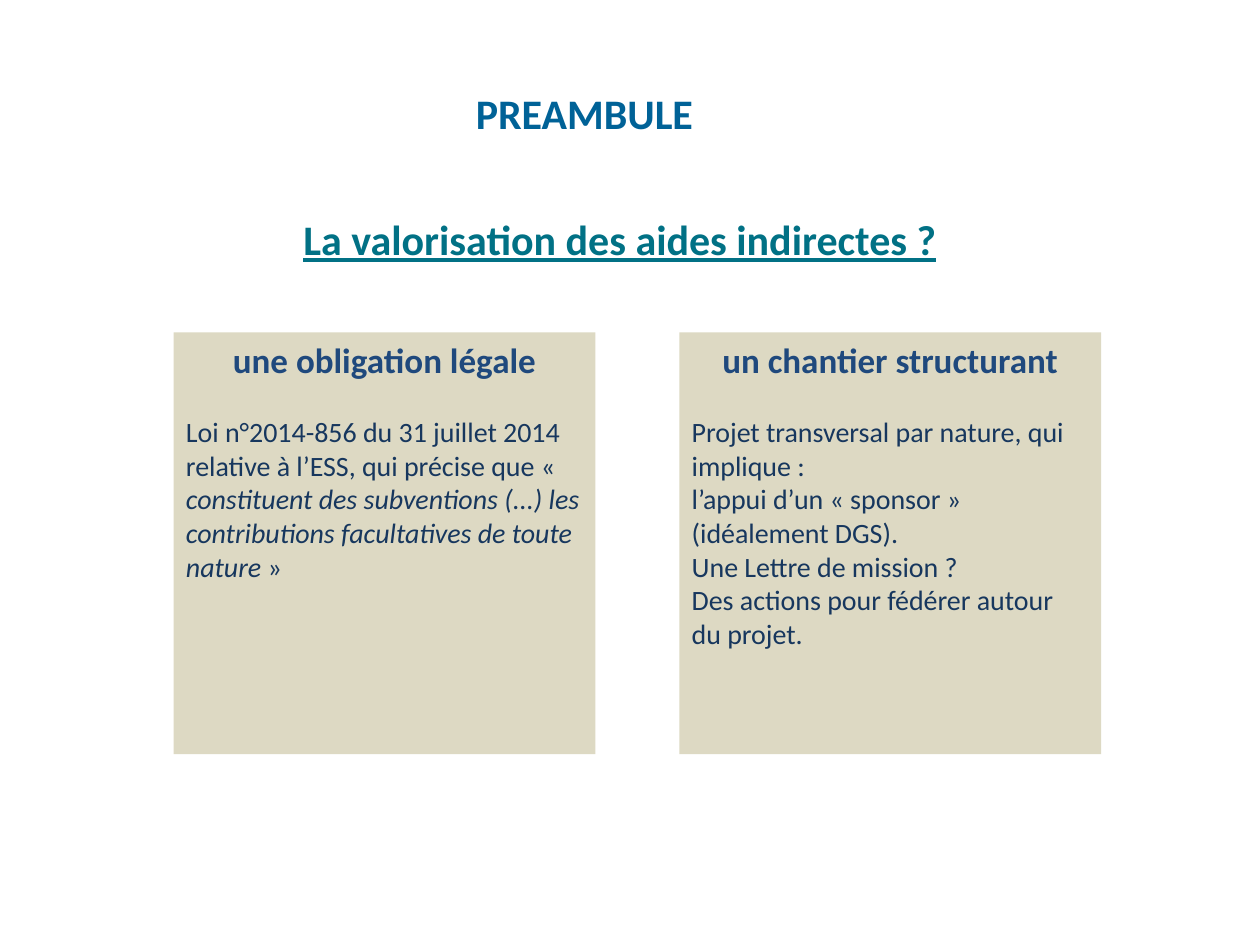
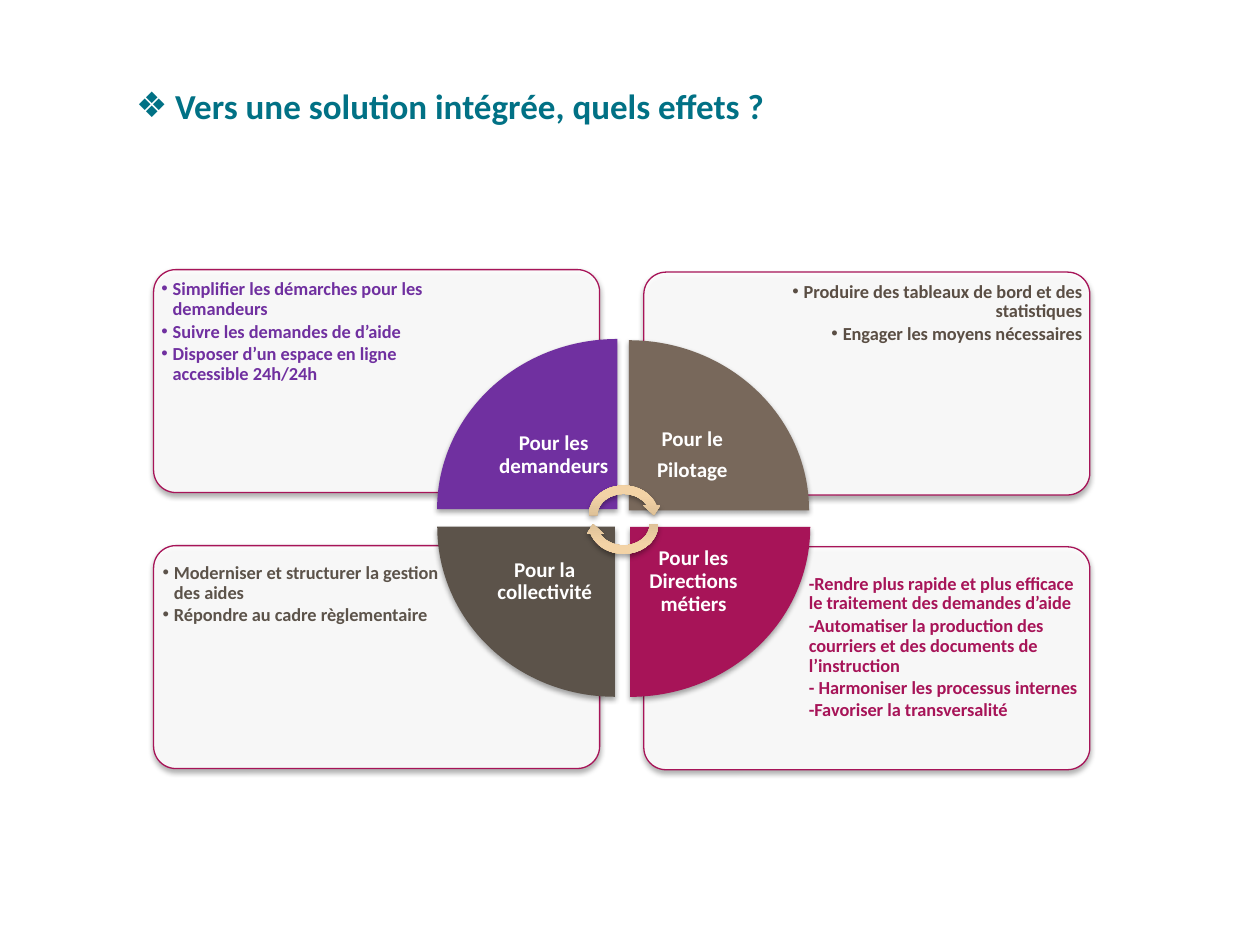
"""Build two slides on valuing indirect aid: a preamble and the effects of an integrated solution."""
from dataclasses import dataclass

from lxml import etree
from pptx import Presentation, util as u
from pptx.dml.color import RGBColor
from pptx.enum import shapes, text
from pptx.oxml.ns import qn

Pt = u.Pt
Shape = shapes.MSO_SHAPE
Align = text.PP_ALIGN
Anchor = text.MSO_ANCHOR

FONT = "Calibri"
WHITE = RGBColor(0xFF, 0xFF, 0xFF)
BLUE = RGBColor(0x00, 0x62, 0x97)
TEAL = RGBColor(0x01, 0x71, 0x85)
SAND = RGBColor(0xDD, 0xD9, 0xC3)
HEADING_NAVY = RGBColor(0x1F, 0x49, 0x7D)
TEXT_NAVY = RGBColor(0x17, 0x37, 0x5E)
PURPLE = RGBColor(0x70, 0x30, 0xA0)
TAUPE = RGBColor(0x78, 0x68, 0x5B)
DARK_TAUPE = RGBColor(0x5A, 0x4E, 0x44)
OLIVE = RGBColor(0x5C, 0x53, 0x4A)
MAGENTA = RGBColor(0xA7, 0x14, 0x58)
BRONZE = RGBColor(0xBB, 0xA3, 0x80)
CREAM = RGBColor(0xF3, 0xD3, 0xA6)


@dataclass(frozen=True)
class Frame:
    left: float
    top: float
    width: float
    height: float

    def lengths(self) -> tuple:
        return Pt(self.left), Pt(self.top), Pt(self.width), Pt(self.height)


@dataclass(frozen=True)
class Style:
    size: float
    color: RGBColor
    bold: bool = True
    align: Align = Align.LEFT
    underline: bool = False
    line: float = 1.0
    after: float = 0
    bullet: str = ""
    hang: float = 0


@dataclass(frozen=True)
class LegalCard:
    heading: str
    paragraphs: tuple


@dataclass(frozen=True)
class Quadrant:
    card: tuple
    list_frame: Frame
    items: tuple
    text_color: RGBColor
    wedge: Frame
    rotation: int
    wedge_color: RGBColor
    label_at: tuple
    label: tuple
    align: Align = Align.LEFT
    bullet: str = "•"


LEGAL_CARDS = (
    LegalCard("une obligation légale", ((
        "Loi n°2014-856 du 31 juillet 2014 relative à l’ESS, qui précise que « ",
        "constituent des subventions (...) les contributions facultatives de toute nature",
        " »"),)),
    LegalCard("un chantier structurant", (
        ("Projet transversal par nature, qui implique :",),
        ("l’appui d’un « sponsor » (idéalement DGS).",),
        ("Une Lettre de mission ?",),
        ("Des actions pour fédérer autour du projet.",))),
)

QUADRANTS = (
    Quadrant((87.8, 154.1), Frame(92.2, 157, 157.7, 90),
             ("Simplifier les démarches pour les demandeurs",
              "Suivre les demandes de d’aide",
              "Disposer d’un espace en ligne accessible 24h/24h"), PURPLE,
             Frame(249.8, 193.7, 103, 97.2), 0, PURPLE,
             (280.1, 229), ("Pour les demandeurs",)),
    Quadrant((367.9, 155.5), Frame(448.6, 158.4, 169.9, 90),
             ("Produire des tableaux de bord et des statistiques",
              "Engager les moyens nécessaires"), DARK_TAUPE,
             Frame(362.2, 191.5, 97.2, 103), 90, TAUPE,
             (359.3, 229), ("Pour le", "Pilotage"), align=Align.RIGHT),
    Quadrant((87.8, 311.8), Frame(92.9, 319, 169.9, 52),
             ("Moderniser et structurer la gestion des aides",
              "Répondre au cadre règlementaire"), OLIVE,
             Frame(252, 298.8, 97.2, 101.5), 270, OLIVE,
             (275, 301.3), ("Pour la collectivité",)),
    Quadrant((367.9, 312.5), Frame(462.2, 325.2, 156.2, 114),
             ("-Rendre plus rapide et plus efficace le traitement des demandes d’aide",
              "-Automatiser la production des courriers et des documents de l’instruction",
              "- Harmoniser les processus internes",
              "-Favoriser la transversalité"), MAGENTA,
             Frame(360, 301, 103, 97.2), 180, MAGENTA,
             (360, 301.3), ("Pour les Directions métiers",), bullet=""),
)


def format_paragraph(para, style: Style) -> None:
    properties = para._p.get_or_add_pPr()
    properties.set("marL", str(Pt(style.hang)))
    properties.set("indent", str(Pt(-style.hang)))
    if style.bullet:
        etree.SubElement(properties, qn("a:buFont"), typeface="Arial")
        etree.SubElement(properties, qn("a:buChar"), char=style.bullet)
    else:
        etree.SubElement(properties, qn("a:buNone"))
    para.alignment = style.align
    para.line_spacing = style.line
    para.space_before = Pt(0)
    para.space_after = Pt(style.after)
    font = para.font
    font.name, font.size, font.bold = FONT, Pt(style.size), style.bold
    font.underline = style.underline
    font.color.rgb = style.color


def write(box, entries: list, anchor: Anchor = Anchor.TOP, insets: tuple = (7.2, 3.6)) -> None:
    """Fill a box with (runs, style) entries; every second run is italic."""
    body = box.text_frame
    body.word_wrap = True
    body.auto_size = text.MSO_AUTO_SIZE.NONE
    body.vertical_anchor = anchor
    body.margin_left = body.margin_right = Pt(insets[0])
    body.margin_top = body.margin_bottom = Pt(insets[1])
    for number, (runs, style) in enumerate(entries):
        para = body.add_paragraph() if number else body.paragraphs[0]
        format_paragraph(para, style)
        for position, words in enumerate(runs):
            span = para.add_run()
            span.text = words
            if position % 2:
                span.font.italic = True


def place(placeholder, frame: Frame) -> None:
    placeholder.left, placeholder.top, placeholder.width, placeholder.height = frame.lengths()


def write_line(placeholder, frame: Frame, words: str, style: Style) -> None:
    place(placeholder, frame)
    write(placeholder, [((words,), style)], Anchor.MIDDLE)


def add_block(page, kind: Shape, frame: Frame, color: RGBColor, rotation: int = 0,
              shadow: bool = True):
    block = page.shapes.add_shape(kind, *frame.lengths())
    block.rotation = rotation
    block.fill.solid()
    block.fill.fore_color.rgb = color
    block.line.fill.background()
    block.shadow.inherit = False
    if shadow:
        effects = block.element.spPr.find(qn("a:effectLst"))
        outer = etree.SubElement(effects, qn("a:outerShdw"), blurRad=str(Pt(3.1)),
                                 dist=str(Pt(1.8)), dir="5400000", rotWithShape="0")
        black = etree.SubElement(outer, qn("a:srgbClr"), val="000000")
        etree.SubElement(black, qn("a:alpha"), val="35000")
    return block


def add_list_card(page, quadrant: Quadrant, placeholder) -> None:
    card = add_block(page, Shape.ROUNDED_RECTANGLE, Frame(*quadrant.card, 254.9, 127.4), WHITE)
    card.adjustments[0] = 0.1
    card.line.color.rgb = MAGENTA
    card.line.width = Pt(0.75)
    white = card.element.spPr.find(qn("a:solidFill")).find(qn("a:srgbClr"))
    etree.SubElement(white, qn("a:alpha"), val="90000")

    card.element.getparent().append(placeholder.element)
    place(placeholder, quadrant.list_frame)
    style = Style(10.5, quadrant.text_color, align=quadrant.align, line=0.9, after=1.5,
                  bullet=quadrant.bullet, hang=6.5 if quadrant.bullet else 0)
    write(placeholder, [((item,), style) for item in quadrant.items], insets=(0, 2.9))


def add_wedge(page, quadrant: Quadrant) -> None:
    add_block(page, Shape.PIE_WEDGE, quadrant.wedge, quadrant.wedge_color, quadrant.rotation)
    label = page.shapes.add_textbox(*Frame(*quadrant.label_at, 72.6, 62).lengths())
    style = Style(12, WHITE, align=Align.CENTER, line=0.9, after=4.5)
    write(label, [((line,), style) for line in quadrant.label], Anchor.MIDDLE, (0, 0))


def add_cycle_arrow(page, top: float, rotation: int) -> None:
    arrow = add_block(page, Shape.CIRCULAR_ARROW, Frame(334, top, 44.6, 38.9), CREAM, rotation)
    arrow.fill.gradient()
    arrow.fill.gradient_angle = 90
    for stop, color, position in zip(arrow.fill.gradient_stops, (BRONZE, CREAM), (0, 0.8)):
        stop.color.rgb = color
        stop.position = position


def build_preamble(deck) -> None:
    page = deck.slides.add_slide(deck.slide_layouts[1])
    write_line(page.shapes.title, Frame(28, 44.6, 612, 39.6), "PREAMBULE",
               Style(24, BLUE, align=Align.CENTER))
    write_line(page.placeholders[1], Frame(31, 116.6, 646.6, 39.6),
               "La valorisation des aides indirectes ?",
               Style(24, TEAL, align=Align.CENTER, underline=True))
    heading = Style(20, HEADING_NAVY, align=Align.CENTER, after=19.5)
    detail = Style(16, TEXT_NAVY, bold=False)
    for column, card in enumerate(LEGAL_CARDS):
        frame = Frame(99.2 + column * 289, 190, 241, 241)
        box = add_block(page, Shape.RECTANGLE, frame, SAND, shadow=False)
        write(box, [((card.heading,), heading)] + [(runs, detail) for runs in card.paragraphs])


def build_effects(deck) -> None:
    page = deck.slides.add_slide(deck.slide_layouts[4])
    write_line(page.shapes.title, Frame(70.6, 43.2, 607.7, 33.8),
               "Vers une solution intégrée, quels effets ?",
               Style(20, TEAL, bullet="❖", hang=22.3))
    lists = [page.placeholders[index] for index in (1, 2, 3, 4)]
    for quadrant, placeholder in zip(QUADRANTS, lists):
        add_list_card(page, quadrant, placeholder)
    for quadrant in QUADRANTS:
        add_wedge(page, quadrant)
    add_cycle_arrow(page, 275, 0)
    add_cycle_arrow(page, 280, 180)


def main() -> None:
    deck = Presentation()
    deck.slide_width, deck.slide_height = Pt(720), Pt(540)
    build_preamble(deck)
    build_effects(deck)
    deck.save("out.pptx")


if __name__ == "__main__":
    main()
